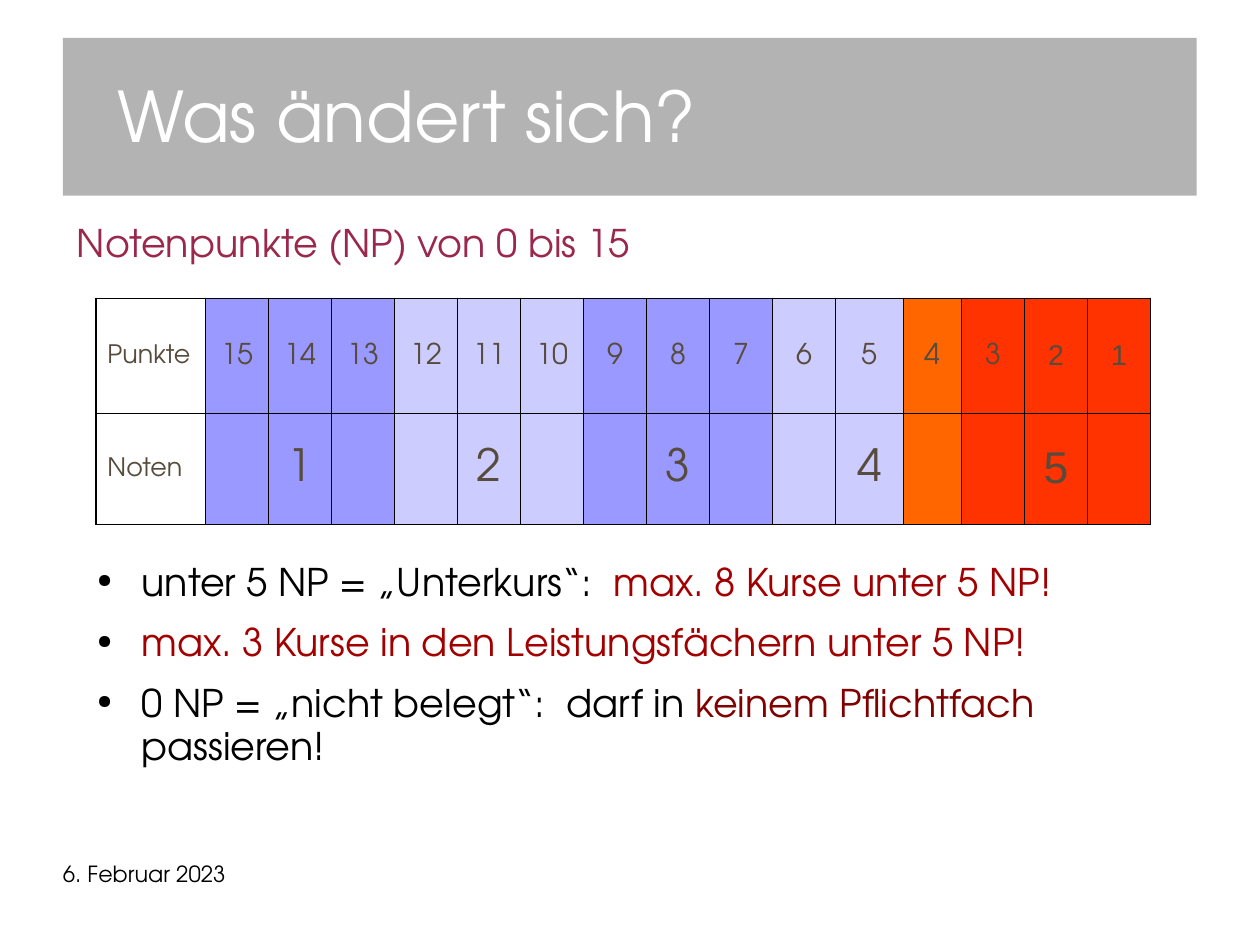
from lxml import etree
from pptx import Presentation
from pptx.dml.color import RGBColor
from pptx.enum import text as t
from pptx.oxml.ns import qn
from pptx.util import Pt

# Content
TITLE = "Was ändert sich?"
HEADING = "Notenpunkte (NP) von 0 bis 15"
DATE = "6. Februar 2023"
ROW_LABELS = ("Punkte", "Noten")
GRADE_GROUPS = [  # points, fill, grade shown under the second point
    (("15", "14", "13"), "9999FF", "1"),
    (("12", "11", "10"), "CCCCFF", "2"),
    (("9", "8", "7"), "9999FF", "3"),
    (("6", "5"), "CCCCFF", "4"),
    (("4",), "FF6600", None),
    (("3", "2", "1"), "FF3300", "5"),
]
RULES = [
    [("unter 5 NP = „Unterkurs“:  ", "000000"), ("max. 8 Kurse unter 5 NP!", "A20000")],
    [("max. 3 Kurse in den Leistungsfächern unter 5 NP!", "A20000")],
    [("0 NP = „nicht belegt“:  darf in ", "000000"),
     ("keinem Pflichtfach", "800000"), (" passieren!", "000000")],
]

# Style
SLIDE_WIDTH, SLIDE_HEIGHT = 793.7, 595.28
FONT = "TeX Gyre Adventor"
ARIAL_POINTS = ("2", "1")
CELL_TEXT = "564B3C"
LEFT = 39.6
LABEL_WIDTH, POINT_WIDTH = 69, 39.7
SPECIAL_WIDTHS = {"5": 42.8, "4": 36.6}
ROW_HEIGHTS = (72.7, 69.8)
OUTER, INNER = 1.08, 0.45


def color(value):
    return RGBColor.from_string(value)


def add_run(paragraph, words, size, ink, font=FONT):
    run = paragraph.add_run()
    run.text = words
    run.font.size = Pt(size)
    run.font.name = font
    run.font.color.rgb = color(ink)


def set_margins(target, left, top, right, bottom):
    target.margin_left, target.margin_top = Pt(left), Pt(top)
    target.margin_right, target.margin_bottom = Pt(right), Pt(bottom)


def add_text_frame(top, width, height):
    frame = slide.shapes.add_textbox(Pt(LEFT), Pt(top), Pt(width), Pt(height)).text_frame
    frame.word_wrap = True
    set_margins(frame, 0, 0, 0, 0)
    frame.paragraphs[0].line_spacing = 0.93
    return frame


def add_bullet(paragraph):
    props = paragraph._p.get_or_add_pPr()
    props.set("marL", str(Pt(49.7)))
    props.set("indent", str(Pt(-28.1)))
    ink = etree.SubElement(props, qn("a:buClr"))
    etree.SubElement(ink, qn("a:srgbClr"), val="000000")
    etree.SubElement(props, qn("a:buSzPct"), val="50000")
    etree.SubElement(props, qn("a:buChar"), char="●")


def set_border(cell, side, width):
    line = etree.SubElement(cell._tc.get_or_add_tcPr(), qn(f"a:ln{side}"), w=str(Pt(width)))
    fill = etree.SubElement(line, qn("a:solidFill"))
    etree.SubElement(fill, qn("a:srgbClr"), val="000000")


def fill_cell(row, column, words, size, fill=None, font=FONT):
    cell = grades.cell(row, column)
    edges = {"L": column == 0, "R": column == len(columns),
             "T": row == 0, "B": row == len(ROW_LABELS) - 1}
    for side, is_outer in edges.items():
        set_border(cell, side, OUTER if is_outer else INNER)
    if fill:
        cell.fill.solid()
        cell.fill.fore_color.rgb = color(fill)
    else:
        cell.fill.background()
    cell.vertical_anchor = t.MSO_ANCHOR.MIDDLE
    set_margins(cell, 7.2, 4.3, 7.2, 3.6)
    if words:
        paragraph = cell.text_frame.paragraphs[0]
        paragraph.alignment = t.PP_ALIGN.CENTER if column else t.PP_ALIGN.LEFT
        paragraph.line_spacing = 0.98 if font == FONT else 0.93
        add_run(paragraph, words, size, CELL_TEXT, font)


prs = Presentation()
prs.slide_width, prs.slide_height = Pt(SLIDE_WIDTH), Pt(SLIDE_HEIGHT)
slide = prs.slides.add_slide(prs.slide_layouts[5])

# Title band
title = slide.shapes.title
title.left, title.top, title.width, title.height = Pt(LEFT), Pt(23.8), Pt(714.2), Pt(99.4)
title.fill.solid()
title.fill.fore_color.rgb = color("B3B3B3")
title_frame = title.text_frame
title_frame.auto_size = t.MSO_AUTO_SIZE.NONE
title_frame.vertical_anchor = t.MSO_ANCHOR.MIDDLE
set_margins(title_frame, 34.2, 2.9, 14.4, 0)
title_frame.paragraphs[0].alignment = t.PP_ALIGN.LEFT
title_frame.paragraphs[0].line_spacing = 0.93
add_run(title_frame.paragraphs[0], TITLE, 44, "FFFFFF")

# Heading
heading = add_text_frame(141, 731.5, 30)
heading.margin_left = Pt(8.6)
add_run(heading.paragraphs[0], HEADING, 24, "99284C")

# Table of points and grades
columns = [(point, fill, grade if place == 1 else None)
           for points, fill, grade in GRADE_GROUPS
           for place, point in enumerate(points)]
widths = [LABEL_WIDTH] + [SPECIAL_WIDTHS.get(point, POINT_WIDTH) for point, _, _ in columns]
grades = slide.shapes.add_table(len(ROW_LABELS), len(widths), Pt(60.5), Pt(187.9),
                                Pt(sum(widths)), Pt(sum(ROW_HEIGHTS))).table
grades.first_row = grades.horz_banding = False
for column, width in zip(grades.columns, widths):
    column.width = Pt(width)
for row, height in zip(grades.rows, ROW_HEIGHTS):
    row.height = Pt(height)
for row, label in enumerate(ROW_LABELS):
    fill_cell(row, 0, label, 16)
for column, (point, fill, grade) in enumerate(columns, start=1):
    font = "Arial" if point in ARIAL_POINTS else FONT
    fill_cell(0, column, point, 18, fill, font)
    fill_cell(1, column, grade, 28, fill, font)

# Rules
rules = add_text_frame(354.2, 731.5, 150)
for number, parts in enumerate(RULES):
    rule = rules.add_paragraph() if number else rules.paragraphs[0]
    add_bullet(rule)
    rule.line_spacing = 0.93
    if number:
        rule.space_before = Pt(11.4)
    for words, ink in parts:
        add_run(rule, words, 24, ink)

# Date
date = add_text_frame(543.4, 185, 41)
add_run(date.paragraphs[0], DATE, 14, "000000")

prs.save("out.pptx")
